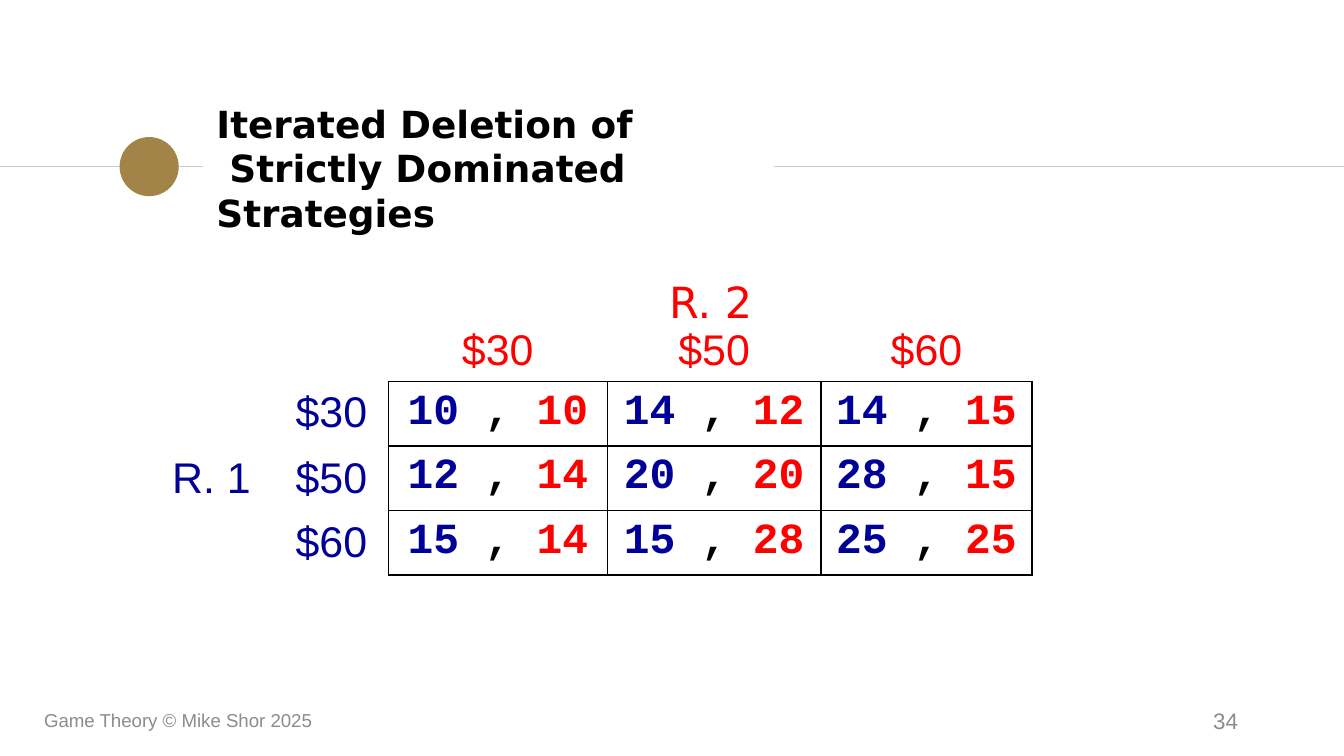
"""Build the slide on iterated deletion of strictly dominated strategies."""
from lxml.etree import SubElement
from pptx import Presentation
from pptx.dml.color import RGBColor
from pptx.enum.shapes import MSO_CONNECTOR as Conn, MSO_SHAPE as Shape
from pptx.enum.text import MSO_ANCHOR as Anchor, PP_ALIGN as Align
from pptx.oxml import parse_xml
from pptx.oxml.ns import nsdecls, qn
from pptx.util import Inches, Pt

TITLE = "Iterated Deletion of\v Strictly Dominated Strategies"
PRICES = ["$30", "$50", "$60"]
PAYOFFS = [
    [(10, 10), (14, 12), (14, 15)],
    [(12, 14), (20, 20), (28, 15)],
    [(15, 14), (15, 28), (25, 25)],
]
COLS = [0.92, 0.79, 1.63, 1.59, 1.57]
ROW = 0.48
RULES = [(0, 1.51), (5.76, 10)]
NOTES = [
    ("Game Theory © Mike Shor 2025", (0.23, 5.21, 3.38, 0.3), 10, Align.LEFT),
    ("34", (7.06, 5.21, 2.25, 0.3), 12, Align.RIGHT),
]
BLUE, RED, BLACK, GRAY = "000099", "FF0000", "000000", "8C8C8C"


def paint(target, color):
    target.solid()
    target.fore_color.rgb = RGBColor.from_string(color)


def style(run, size, color, font="Arial", bold=False):
    run.font.size, run.font.name, run.font.bold = Pt(size), font, bold
    paint(run.font.fill, color)


def write(frame, parts, size, font="Arial", bold=False, align=Align.LEFT):
    para = frame.paragraphs[0]
    para.alignment = align
    for text, color in parts:
        run = para.add_run()
        run.text = text
        style(run, size, color, font, bold)


def label(slide, text, box, size, color, font="Arial", align=Align.LEFT):
    frame = slide.shapes.add_textbox(*map(Inches, box)).text_frame
    write(frame, [(text, color)], size, font, align=align)
    return frame


def edge(cell, sides):
    cell.fill.background()
    props = cell._tc.get_or_add_tcPr()
    for i, side in enumerate("LRTB"):
        shown = side in sides
        ink = f'<a:solidFill><a:srgbClr val="{BLACK}"/></a:solidFill>' if shown else "<a:noFill/>"
        props.insert(i, parse_xml(f'<a:ln{side} {nsdecls("a")} w="12700">{ink}</a:ln{side}>'))


def add_rules(slide):
    for left, right in RULES:
        rule = slide.shapes.add_connector(
            Conn.STRAIGHT, Inches(left), Inches(1.24), Inches(right), Inches(1.24))
        paint(rule.line.fill, "CCCCCC")
        rule.line.width = Pt(0.75)
        SubElement(rule._element.spPr, qn("a:effectLst"))
    dot = slide.shapes.add_shape(Shape.OVAL, *map(Inches, (0.89, 1.02, 0.44, 0.44)))
    dot.shadow.inherit = False
    paint(dot.fill, "A28448")
    dot.line.fill.background()


def add_title(slide):
    title = slide.shapes.title
    title.left, title.top, title.width, title.height = map(Inches, (1.51, 1.01, 4.24, 0.48))
    frame = title.text_frame
    frame.text = TITLE
    frame.word_wrap = True
    frame.vertical_anchor = Anchor.MIDDLE
    frame.margin_left = frame.margin_right = frame.margin_top = frame.margin_bottom = Inches(0.1)
    frame.paragraphs[0].alignment = Align.LEFT
    for run in frame.paragraphs[0].runs:
        style(run, 20, BLACK, "DejaVu Sans", True)


def add_game(slide):
    count = len(PRICES) + 1
    table = slide.shapes.add_table(
        count, len(COLS), Inches(1.18), Inches(2.36),
        Inches(sum(COLS)), Inches(ROW * count)).table
    table.first_row = table.horz_banding = False
    for col, width in zip(table.columns, COLS):
        col.width = Inches(width)
    for r, row in enumerate(table.rows):
        row.height = Inches(ROW)
        for c, cell in enumerate(row.cells):
            sides = "LRTB" if r and c > 1 else "B" if c > 1 else "R" if r and c else ""
            edge(cell, sides)
    for i, price in enumerate(PRICES):
        head, side = table.cell(0, i + 2), table.cell(i + 1, 1)
        head.vertical_anchor = Anchor.BOTTOM
        side.vertical_anchor = Anchor.MIDDLE if i else Anchor.TOP
        write(head.text_frame, [(price, RED)], 23, align=Align.CENTER)
        write(side.text_frame, [(price, BLUE)], 23)
    for r, pairs in enumerate(PAYOFFS, 1):
        for c, (first, second) in enumerate(pairs, 2):
            parts = [(str(first), BLUE), (" , ", BLACK), (str(second), RED)]
            write(table.cell(r, c).text_frame, parts, 23, "Courier New", True, Align.CENTER)
    player = table.cell(1, 0)
    player.merge(table.cell(count - 1, 0))
    player.vertical_anchor = Anchor.MIDDLE
    write(player.text_frame, [("R. 1", BLUE)], 23)


def main():
    deck = Presentation()
    deck.slide_width = Inches(10)
    deck.slide_height = deck.slide_width * 9 // 16
    slide = deck.slides.add_slide(deck.slide_layouts[5])
    add_rules(slide)
    add_title(slide)
    add_game(slide)
    rival = label(slide, "R. 2", (4.98, 2.05, 0.66, 0.39), 23, RED, "DejaVu Sans")
    rival.margin_left = rival.margin_right = rival.margin_top = rival.margin_bottom = 0
    rival.word_wrap = False
    for text, box, size, align in NOTES:
        note = label(slide, text, box, size, GRAY, align=align)
        note.word_wrap = True
        note.vertical_anchor = Anchor.MIDDLE
    deck.save("out.pptx")


if __name__ == "__main__":
    main()
